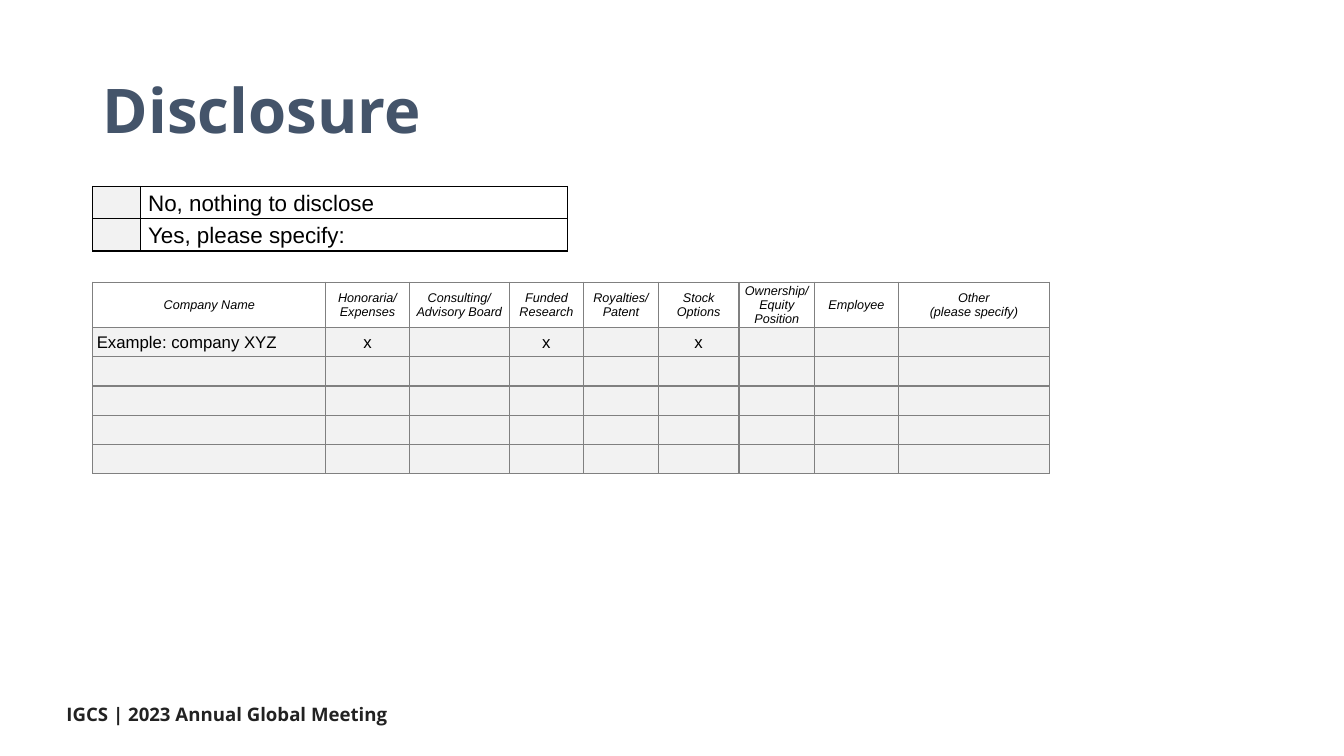
from lxml import etree
from pptx import Presentation, util as u
from pptx.dml import color
from pptx.enum import text
from pptx.oxml import ns

COLORS = {
    "title": "44546A", "footer": "222222", "text": "000000", "white": "FFFFFF",
    "entry": "F2F2F2", "choice_border": "000000", "form_border": "808080",
}
FONTS = {
    "title": dict(name="Open Sans", size=u.Pt(44), bold=True),
    "footer": dict(name="Open Sans", size=u.Pt(13.3), bold=True),
    "choice": dict(name="Arial", size=u.Pt(16), bold=False),
    "header": dict(name="Arial", size=u.Pt(9), bold=False, italic=True),
    "entry": dict(name="Arial", size=u.Pt(12), bold=False),
}
LEFT, CENTER = text.PP_ALIGN.LEFT, text.PP_ALIGN.CENTER


def write(frame, words, style, ink, align=LEFT, spacing=1.0):
    """Write one formatted paragraph per line of words."""
    frame.text = words
    for paragraph in frame.paragraphs:
        paragraph.alignment = align
        paragraph.line_spacing = spacing
        for run in paragraph.runs:
            for attribute, value in FONTS[style].items():
                setattr(run.font, attribute, value)
            run.font.color.rgb = color.RGBColor.from_string(COLORS[ink])
        if not paragraph.runs:
            # An empty cell takes its line height from the end mark
            end_mark = etree.SubElement(paragraph._p, ns.qn("a:endParaRPr"))
            end_mark.set("sz", str(int(FONTS[style]["size"].pt * 100)))


def add_grid(left, top, widths, heights, border, margins):
    """Add a plain table with a thin border around every cell."""
    table = slide.shapes.add_table(
        len(heights), len(widths), u.Inches(left), u.Inches(top),
        u.Inches(sum(widths)), u.Inches(sum(heights))).table
    table.first_row = table.horz_banding = False
    for column, width in zip(table.columns, widths):
        column.width = u.Inches(width)
    for row, height in zip(table.rows, heights):
        row.height = u.Inches(height)
    for cell in table.iter_cells():
        for side, margin in margins.items():
            setattr(cell, f"margin_{side}", u.Inches(margin))
        properties = cell._tc.get_or_add_tcPr()
        for edge in ("lnL", "lnR", "lnT", "lnB"):
            line = etree.SubElement(properties, ns.qn(f"a:{edge}"), w=str(u.Pt(1)))
            fill = etree.SubElement(line, ns.qn("a:solidFill"))
            etree.SubElement(fill, ns.qn("a:srgbClr"), val=COLORS[border])
    return table


presentation = Presentation()
presentation.slide_width = u.Inches(13.33)
presentation.slide_height = u.Inches(7.5)
slide = presentation.slides.add_slide(presentation.slide_layouts[5])

# Title
title = slide.shapes.title
title.left, title.top = u.Inches(0.92), u.Inches(0.4)
title.width, title.height = u.Inches(11.5), u.Inches(1.45)
title.text_frame.vertical_anchor = text.MSO_ANCHOR.MIDDLE
write(title.text_frame, "Disclosure", "title", "title", spacing=0.9)

# Yes or no choice
choices = ["No, nothing to disclose", "Yes, please specify:"]
choice_table = add_grid(0.92, 1.85, [0.47, 4.24], [0.32] * 2, "choice_border",
                        dict(left=0.08, top=0.01, right=0.08, bottom=0))
for row, choice in enumerate(choices):
    for column, (words, fill) in enumerate([("", "entry"), (choice, "white")]):
        cell = choice_table.cell(row, column)
        cell.fill.solid()
        cell.fill.fore_color.rgb = color.RGBColor.from_string(COLORS[fill])
        write(cell.text_frame, words, "choice", "text", spacing=1.15)

# Disclosure form
headers = ["Company Name", "Honoraria/\nExpenses", "Consulting/ Advisory Board",
           "Funded Research", "Royalties/ Patent", "Stock Options",
           "Ownership/ Equity Position", "Employee", "Other\n(please specify)"]
example = ["Example: company XYZ", "x", "", "x", "", "x", "", "", ""]
form_rows = [headers, example] + [[""] * len(headers)] * 4
form_table = add_grid(0.92, 2.8, [2.31, 0.83, 0.99, 0.74, 0.74, 0.8, 0.75, 0.83, 1.5],
                      [0.45] + [0.29] * 5, "form_border",
                      dict(left=0.04, top=0, right=0.04, bottom=0))
for row, entries in enumerate(form_rows):
    style, fill = ("header", "white") if row == 0 else ("entry", "entry")
    for column, words in enumerate(entries):
        cell = form_table.cell(row, column)
        cell.vertical_anchor = text.MSO_ANCHOR.MIDDLE
        cell.fill.solid()
        cell.fill.fore_color.rgb = color.RGBColor.from_string(COLORS[fill])
        align = LEFT if row and column == 0 else CENTER
        write(cell.text_frame, words, style, "text", align)

# Footer
footer = slide.shapes.add_textbox(
    u.Inches(0.53), u.Inches(6.8), u.Inches(5.14), u.Inches(0.57)).text_frame
footer.word_wrap = True
footer.vertical_anchor = text.MSO_ANCHOR.MIDDLE
for side in ("left", "top", "right", "bottom"):
    setattr(footer, f"margin_{side}", u.Inches(0.13))
write(footer, "IGCS | 2023 Annual Global Meeting", "footer", "footer")

presentation.save("out.pptx")
